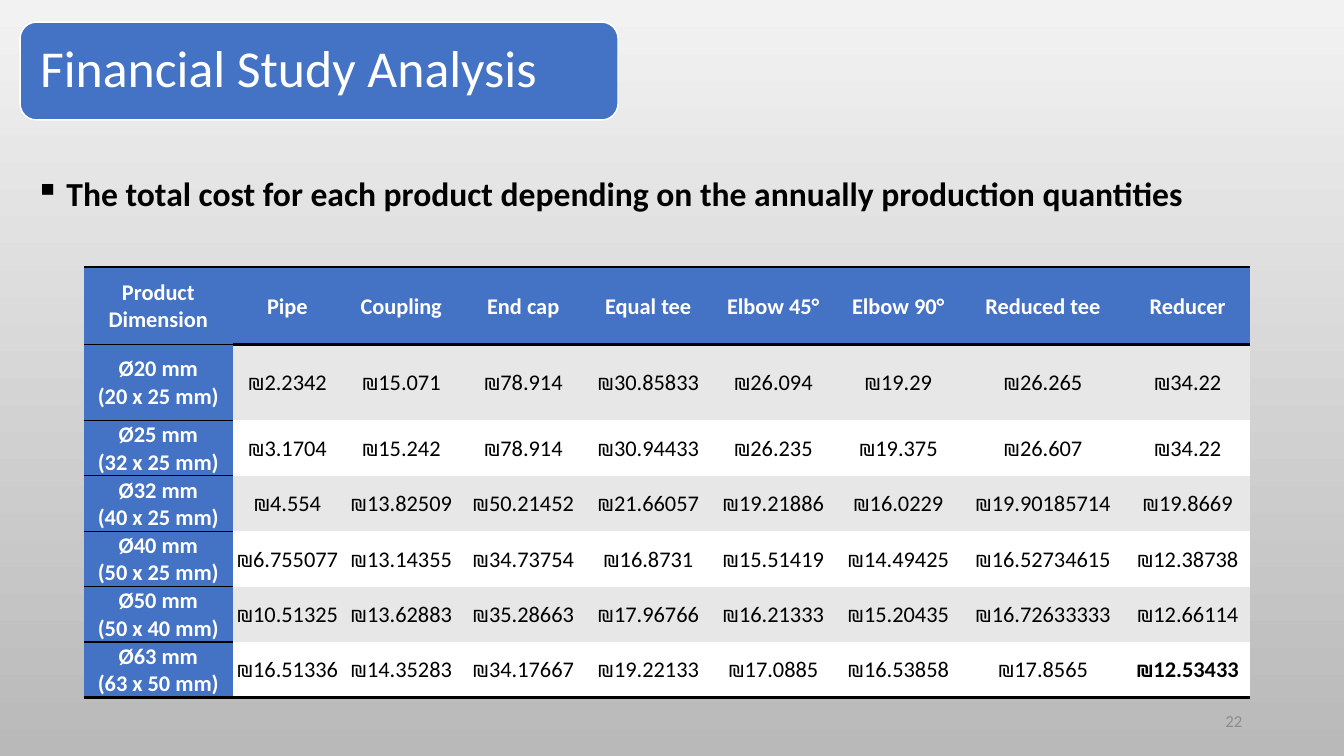
from lxml import etree
from pptx import Presentation
from pptx import util as u
from pptx.dml.color import RGBColor
from pptx.enum import shapes, text
from pptx.oxml import ns

COLORS = {"blue": "4472C4", "white": "FFFFFF", "band": "E7E7E7", "black": "000000",
          "grey": "8C8C8C", "bg_top": "F2F2F2", "bg_bottom": "B9B9B9"}
NO_GRID_STYLE = "{2D5ABB26-0587-4C30-8999-92F81FD0307C}"

HEADERS = ["Product Dimension", "Pipe", "Coupling", "End cap", "Equal tee",
           "Elbow 45°", "Elbow 90°", "Reduced tee", "Reducer"]
COSTS = [
    ("Ø20 mm\n(20 x 25 mm)", "2.2342 15.071 78.914 30.85833 26.094 19.29 26.265 34.22"),
    ("Ø25 mm\n(32 x 25 mm)", "3.1704 15.242 78.914 30.94433 26.235 19.375 26.607 34.22"),
    ("Ø32 mm\n(40 x 25 mm)",
     "4.554 13.82509 50.21452 21.66057 19.21886 16.0229 19.90185714 19.8669"),
    ("Ø40 mm\n(50 x 25 mm)",
     "6.755077 13.14355 34.73754 16.8731 15.51419 14.49425 16.52734615 12.38738"),
    ("Ø50 mm\n(50 x 40 mm)",
     "10.51325 13.62883 35.28663 17.96766 16.21333 15.20435 16.72633333 12.66114"),
    ("Ø63 mm\n(63 x 50 mm)",
     "16.51336 14.35283 34.17667 19.22133 17.0885 16.53858 17.8565 12.53433"),
]
COLUMN_WIDTHS = [1.48, 1.08, 1.18, 1.24, 1.24, 1.24, 1.24, 1.63, 1.24]
ROW_HEIGHTS = [0.77, 0.75] + [0.55] * 5


def format_text(frame, size, color, bold=False, align=text.PP_ALIGN.LEFT):
    for paragraph in frame.paragraphs:
        paragraph.alignment = align
        for run in paragraph.runs:
            run.font.name = "Calibri"
            run.font.size = u.Pt(size)
            run.font.bold = bold
            run.font.color.rgb = RGBColor.from_string(COLORS[color])


def add_border(cell, side, points):
    """Draw a black edge; side is lnT or lnB, and lnB must be added before lnT."""
    line = etree.Element(ns.qn(f"a:{side}"), w=str(u.Pt(points)))
    solid = etree.SubElement(line, ns.qn("a:solidFill"))
    etree.SubElement(solid, ns.qn("a:srgbClr"), val=COLORS["black"])
    cell._tc.get_or_add_tcPr().insert(0, line)


prs = Presentation()
prs.slide_width, prs.slide_height = u.Inches(13.33), u.Inches(7.5)
slide = prs.slides.add_slide(prs.slide_layouts[6])

backdrop = slide.background.fill
backdrop.gradient()
backdrop.gradient_angle = 270
for stop, name in zip(backdrop.gradient_stops, ["bg_top", "bg_bottom"]):
    stop.color.rgb = RGBColor.from_string(COLORS[name])

# Page number
page_number = slide.shapes.add_textbox(
    u.Inches(9.42), u.Inches(6.95), u.Inches(3), u.Inches(0.4)).text_frame
page_number.word_wrap = True
page_number.vertical_anchor = text.MSO_ANCHOR.MIDDLE
page_number.text = "22"
format_text(page_number, 12, "grey", align=text.PP_ALIGN.RIGHT)

# Cost table
cost_table = slide.shapes.add_table(
    len(COSTS) + 1, len(HEADERS), u.Inches(0.83), u.Inches(2.65),
    u.Inches(sum(COLUMN_WIDTHS)), u.Inches(sum(ROW_HEIGHTS))).table
cost_table._tbl.tblPr.find(ns.qn("a:tableStyleId")).text = NO_GRID_STYLE
for column, width in zip(cost_table.columns, COLUMN_WIDTHS):
    column.width = u.Inches(width)
for row, height in zip(cost_table.rows, ROW_HEIGHTS):
    row.height = u.Inches(height)

lines = [HEADERS] + [[size] + [f"₪{cost}" for cost in costs.split()] for size, costs in COSTS]
last_row, last_col = len(COSTS), len(HEADERS) - 1
for r, line_values in enumerate(lines):
    for c, value in enumerate(line_values):
        cell = cost_table.cell(r, c)
        heading = r == 0 or c == 0
        cell.text_frame.text = value
        cell.vertical_anchor = text.MSO_ANCHOR.MIDDLE
        cell.margin_left = cell.margin_right = cell.margin_top = u.Inches(0.01)
        cell.margin_bottom = 0
        format_text(cell.text_frame, 16, "white" if heading else "black",
                    bold=heading or (r, c) == (last_row, last_col),
                    align=text.PP_ALIGN.CENTER)
        fill_name = "blue" if heading else "band" if r % 2 else "white"
        cell.fill.solid()
        cell.fill.fore_color.rgb = RGBColor.from_string(COLORS[fill_name])
        if heading or r == last_row:
            add_border(cell, "lnB", 1 if c == 0 and r < last_row else 2)
        if heading:
            add_border(cell, "lnT", 2 if r == 0 else 1)

# Title banner
banner = slide.shapes.add_shape(
    shapes.MSO_SHAPE.ROUNDED_RECTANGLE,
    u.Inches(0.2), u.Inches(0.22), u.Inches(5.93), u.Inches(0.97))
banner.shadow.inherit = False
banner.fill.solid()
banner.fill.fore_color.rgb = RGBColor.from_string(COLORS["blue"])
banner.line.color.rgb = RGBColor.from_string(COLORS["white"])
banner.line.width = u.Pt(1)
title = banner.text_frame
title.margin_left = title.margin_right = u.Inches(0.15)
title.vertical_anchor = text.MSO_ANCHOR.MIDDLE
title.text = "Financial Study Analysis"
title.paragraphs[0].line_spacing = 0.9
format_text(title, 37, "white")

# Bullet statement
statement = slide.shapes.add_textbox(
    u.Inches(0.25), u.Inches(1.67), u.Inches(11.71), u.Inches(0.5)).text_frame
statement.word_wrap = False
statement.auto_size = text.MSO_AUTO_SIZE.SHAPE_TO_FIT_TEXT
statement.text = ("The total cost for each product depending on "
                  "the annually production quantities")
format_text(statement, 24, "black", bold=True)
bullet = statement.paragraphs[0]._p.get_or_add_pPr()
bullet.set("marL", str(u.Inches(0.31)))
bullet.set("indent", str(-u.Inches(0.31)))
etree.SubElement(bullet, ns.qn("a:buChar"), char="▪")

prs.save("out.pptx")
